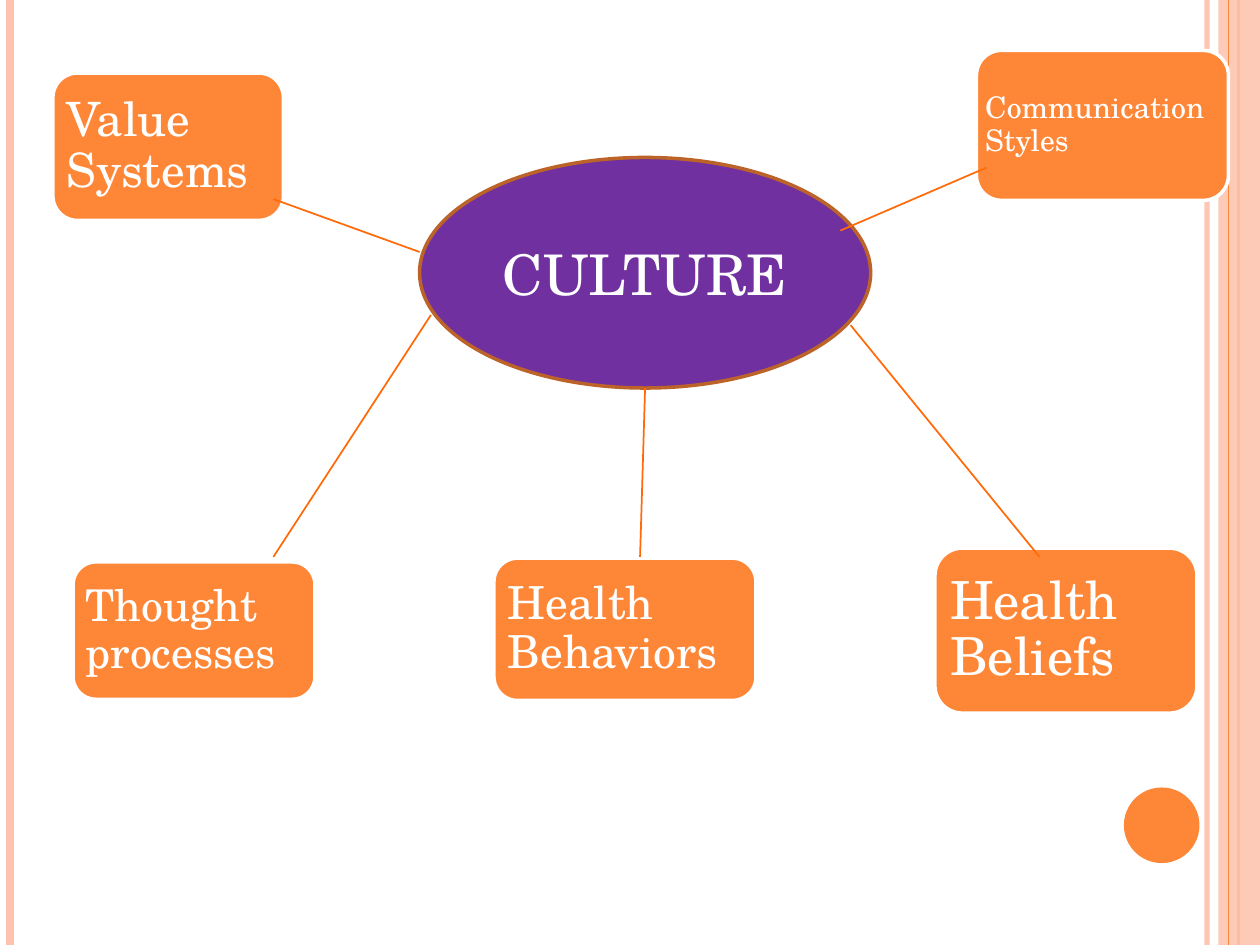
"""Build a slide that links culture to five aspects of health care."""
from dataclasses import dataclass
from typing import Optional

from lxml import etree
from pptx import Presentation
from pptx import util as u
from pptx.dml.color import RGBColor
from pptx.enum import shapes, text
from pptx.oxml import ns

WHITE = RGBColor(0xFF, 0xFF, 0xFF)
ORANGE = RGBColor(0xFE, 0x86, 0x37)
PEACH = RGBColor(0xFE, 0xC3, 0xAE)
PURPLE = RGBColor(0x70, 0x30, 0xA0)
BROWN = RGBColor(0xBC, 0x63, 0x29)
SPOKE_COLOR = RGBColor(0xFF, 0x6B, 0x0A)
FONT = "TeX Gyre Schola"
SLIDE_WIDTH, SLIDE_HEIGHT = 10, 7.5
CORNER_INSET = 0.16667 * 0.29289


@dataclass(frozen=True)
class Box:
    left: float
    top: float
    width: float
    height: float


@dataclass(frozen=True)
class Label:
    wording: str
    size: int
    margin: float


@dataclass(frozen=True)
class Node:
    box: Box
    label: Label


@dataclass(frozen=True)
class Line:
    start: tuple[float, float]
    end: tuple[float, float]
    color: RGBColor
    weight: float
    opacity: int = 100


def stripe(x: float, color: RGBColor, weight: float, opacity: int = 100) -> Line:
    return Line((x, 0), (x, SLIDE_HEIGHT), color, weight, opacity)


def spoke(start: tuple[float, float], end: tuple[float, float]) -> Line:
    return Line(start, end, SPOKE_COLOR, 1)


OUTER_STRIPES = [
    stripe(9.58, PEACH, 3, 93),
    stripe(0.08, PEACH, 4.5),
    stripe(9.83, ORANGE, 1.5),
]
INNER_STRIPE = stripe(9.75, ORANGE, 0.75)
BAND = Box(9.67, 0, 0.33, SLIDE_HEIGHT)
DOT = Box(8.92, 6.25, 0.6, 0.6)
CULTURE = Node(Box(3.33, 1.25, 3.58, 1.83), Label("CULTURE", 32, 0.1))
NODES = [
    Node(Box(0.58, 4.46, 1.92, 1.09), Label("Thought processes", 25, 0.1)),
    Node(Box(3.92, 4.43, 2.08, 1.13), Label("Health Behaviors", 26, 0.11)),
    Node(Box(7.42, 4.35, 2.08, 1.31), Label("Health Beliefs", 30, 0.12)),
    Node(Box(7.75, 0.4, 2, 1.19), Label("Communication Styles", 17, 0.07)),
    Node(Box(0.42, 0.58, 1.83, 1.17), Label("Value Systems", 27, 0.11)),
]
SPOKES = [
    spoke((3.42, 2.5), (2.17, 4.42)),
    spoke((5.12, 3.08), (5.08, 4.42)),
    spoke((6.75, 2.58), (8.25, 4.42)),
    spoke((6.67, 1.83), (7.83, 1.33)),
    spoke((3.33, 2), (2.17, 1.58)),
]


def apply_format(target, values: dict) -> None:
    for name, value in values.items():
        setattr(target, name, value)


def set_opacity(element, percent: int) -> None:
    color = next(element.iter(ns.qn("a:srgbClr")))
    etree.SubElement(color, ns.qn("a:alpha"), val=str(percent * 1000))


def draw_line(slide, line: Line) -> None:
    connector = slide.shapes.add_connector(
        shapes.MSO_CONNECTOR.STRAIGHT,
        *(u.Inches(value) for value in line.start + line.end),
    )
    connector.line.color.rgb = line.color
    connector.line.width = u.Pt(line.weight)
    properties = connector._element.spPr
    if line.opacity < 100:
        set_opacity(properties, line.opacity)
    etree.SubElement(properties, ns.qn("a:effectLst"))


def draw_shape(slide, kind: shapes.MSO_SHAPE, box: Box, fill: RGBColor,
               outline: Optional[RGBColor] = None):
    shape = slide.shapes.add_shape(
        kind, *(u.Inches(value) for value in (box.left, box.top, box.width, box.height))
    )
    shape.shadow.inherit = False
    shape.fill.solid()
    shape.fill.fore_color.rgb = fill
    if outline is None:
        shape.line.fill.background()
    else:
        shape.line.color.rgb = outline
        shape.line.width = u.Pt(2)
    return shape


def write_label(shape, label: Label, margin: float, alignment: text.PP_ALIGN,
                spacing: float) -> None:
    frame = shape.text_frame
    sides = ("left", "top", "right", "bottom")
    apply_format(frame, {f"margin_{side}": u.Inches(margin) for side in sides})
    apply_format(frame, {"word_wrap": True, "vertical_anchor": text.MSO_ANCHOR.MIDDLE})
    paragraph = frame.paragraphs[0]
    apply_format(paragraph, {"alignment": alignment, "line_spacing": spacing})
    run = paragraph.add_run()
    run.text = label.wording
    apply_format(run.font, {"name": FONT, "size": u.Pt(label.size)})
    run.font.color.rgb = WHITE


def draw_node(slide, node: Node) -> None:
    shape = draw_shape(slide, shapes.MSO_SHAPE.ROUNDED_RECTANGLE, node.box, ORANGE, WHITE)
    margin = node.label.margin - CORNER_INSET * node.box.height
    write_label(shape, node.label, margin, text.PP_ALIGN.LEFT, 0.9)


def draw_decoration(slide) -> None:
    for line in OUTER_STRIPES:
        draw_line(slide, line)
    band = draw_shape(slide, shapes.MSO_SHAPE.RECTANGLE, BAND, PEACH)
    set_opacity(band._element.spPr, 87)
    draw_line(slide, INNER_STRIPE)
    draw_shape(slide, shapes.MSO_SHAPE.OVAL, DOT, ORANGE)


def main() -> None:
    presentation = Presentation()
    apply_format(presentation, {
        "slide_width": u.Inches(SLIDE_WIDTH),
        "slide_height": u.Inches(SLIDE_HEIGHT),
    })
    slide = presentation.slides.add_slide(presentation.slide_layouts[6])
    draw_decoration(slide)
    culture = draw_shape(slide, shapes.MSO_SHAPE.OVAL, CULTURE.box, PURPLE, BROWN)
    write_label(culture, CULTURE.label, CULTURE.label.margin, text.PP_ALIGN.CENTER, 1.0)
    for node in NODES:
        draw_node(slide, node)
    for line in SPOKES:
        draw_line(slide, line)
    presentation.save("out.pptx")


if __name__ == "__main__":
    main()
